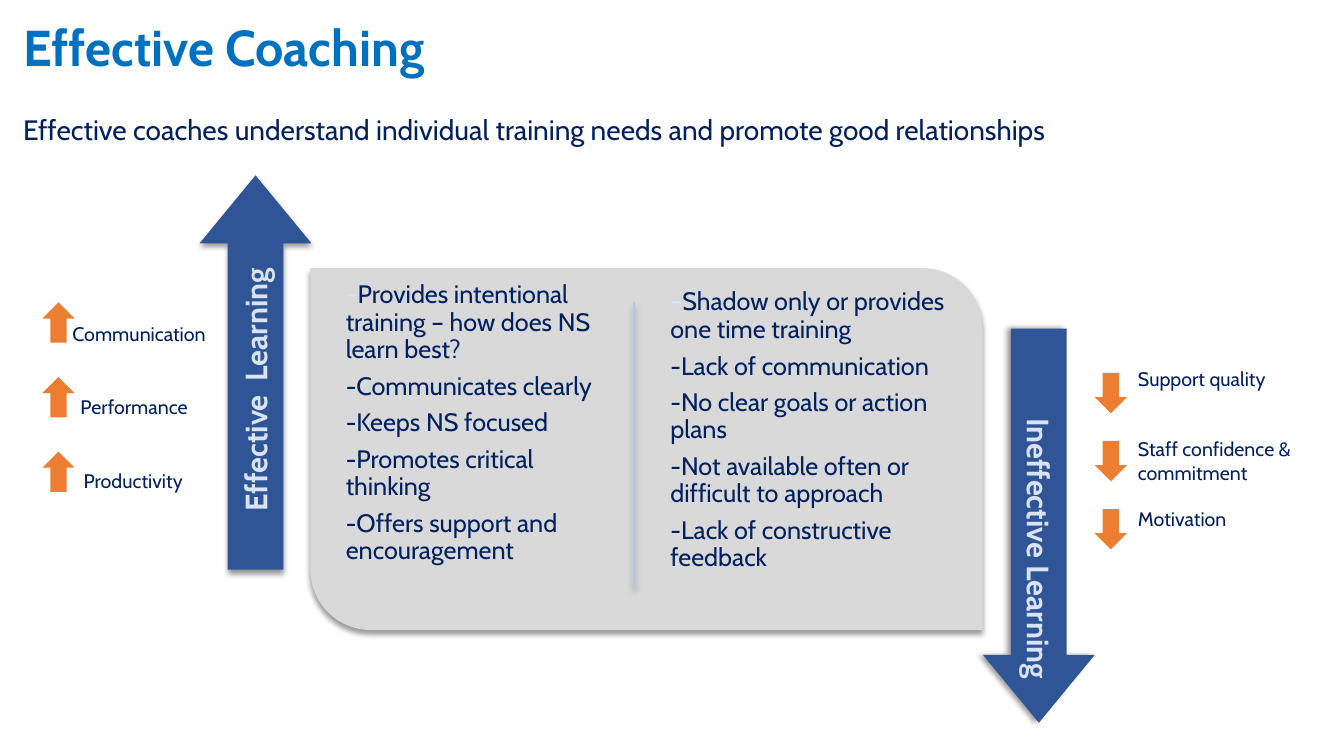
from lxml import etree
from pptx import Presentation
from pptx import util as u
from pptx.dml.color import RGBColor
from pptx.enum import shapes, text
from pptx.oxml import ns

WIDTH, HEIGHT = u.Inches(13.333), u.Inches(7.5)
FONT = "Cabin"

TITLE_BLUE = RGBColor(0x00, 0x70, 0xC0)
NAVY = RGBColor(0x00, 0x20, 0x60)
ARROW_BLUE = RGBColor(0x2F, 0x55, 0x97)
PALE_BLUE = RGBColor(0xDA, 0xE3, 0xF3)
DIVIDER_BLUE = RGBColor(0xB4, 0xC7, 0xE7)
PANEL_GREY = RGBColor(0xD9, 0xD9, 0xD9)
ORANGE = RGBColor(0xED, 0x7D, 0x31)

EFFECTIVE = [
    "Provides intentional training – how does NS learn best?",
    "Communicates clearly",
    "Keeps NS focused",
    "Promotes critical thinking",
    "Offers support and encouragement",
]
INEFFECTIVE = [
    "Shadow only or provides one time training",
    "Lack of communication",
    "No clear goals or action plans",
    "Not available often or difficult to approach",
    "Lack of constructive feedback",
]
# Label, left and width in percent of the slide's width
GAINS = [("Communication", 4.65, 11.78), ("Performance", 5.25, 9.83),
         ("Productivity", 5.48, 9.45)]
LOSSES = [("Support quality", 83.93, 12.98),
          ("Staff confidence & commitment", 83.93, 14.25),
          ("Motivation", 83.93, 10.88)]


def area(left, top, width, height):
    """Turn percentages of the slide's size into lengths."""
    return [int(share * side / 100) for share, side in
            zip((left, top, width, height), (WIDTH, HEIGHT) * 2)]


def apply(target, formats):
    for name, value in formats.items():
        setattr(target, name, value)


def place(placeholder, box):
    apply(placeholder, dict(zip(("left", "top", "width", "height"), box)))


def add_run(paragraph, wording, size, color, bold=False):
    run = paragraph.add_run()
    run.text = wording
    apply(run.font, {"name": FONT, "size": u.Pt(size), "bold": bold})
    run.font.color.rgb = color


def add_shadow(element, direction=90):
    props = element._element.spPr
    effects = props.find(ns.qn("a:effectLst"))
    if effects is None:
        effects = etree.SubElement(props, ns.qn("a:effectLst"))
    shadow = etree.SubElement(
        effects, ns.qn("a:outerShdw"), blurRad=str(u.Pt(4)),
        dist=str(u.Pt(3)), dir=str(direction * 60000), rotWithShape="0")
    black = etree.SubElement(shadow, ns.qn("a:srgbClr"), val="000000")
    etree.SubElement(black, ns.qn("a:alpha"), val="40000")


def add_block(slide, preset, box, color, rotation=0, adjustments=()):
    block = slide.shapes.add_shape(preset, *box)
    block.shadow.inherit = False
    block.fill.solid()
    block.fill.fore_color.rgb = color
    block.line.fill.background()
    block.rotation = rotation
    for i, value in enumerate(adjustments):
        block.adjustments[i] = value
    return block


def add_label(slide, wording, box, size, color=NAVY, bold=False, rotation=0,
              align=text.PP_ALIGN.LEFT, anchor=text.MSO_ANCHOR.TOP):
    label = slide.shapes.add_textbox(*box)
    label.rotation = rotation
    apply(label.text_frame, {"word_wrap": True, "vertical_anchor": anchor})
    paragraph = label.text_frame.paragraphs[0]
    paragraph.alignment = align
    add_run(paragraph, wording, size, color, bold)


def fill_title(title):
    place(title, area(0.98, 0, 86.25, 13.2))
    apply(title.text_frame, {"vertical_anchor": text.MSO_ANCHOR.MIDDLE,
                             "auto_size": text.MSO_AUTO_SIZE.NONE})
    paragraph = title.text_frame.paragraphs[0]
    apply(paragraph, {"alignment": text.PP_ALIGN.LEFT, "line_spacing": 0.9})
    add_run(paragraph, "Effective Coaching", 36, TITLE_BLUE, True)


def fill_list(body, box, items):
    place(body, box)
    frame = body.text_frame
    apply(frame, {"word_wrap": True, "auto_size": text.MSO_AUTO_SIZE.NONE,
                  "vertical_anchor": text.MSO_ANCHOR.TOP})
    apply(frame, {f"margin_{side}": u.Inches(0.08)
                  for side in ("left", "top", "right", "bottom")})
    for i, item in enumerate(items):
        paragraph = frame.add_paragraph() if i else frame.paragraphs[0]
        props = paragraph._p.get_or_add_pPr()
        props.set("marL", "0")
        props.set("indent", "0")
        etree.SubElement(props, ns.qn("a:buNone"))
        apply(paragraph, {"line_spacing": 0.9, "space_before": u.Pt(0),
                          "space_after": u.Pt(6.8)})
        if i:
            add_run(paragraph, "-" + item, 18, NAVY)
        else:
            add_run(paragraph, "-", 20, PALE_BLUE)
            add_run(paragraph, item, 18, NAVY)


def add_panel(slide):
    panel = add_block(slide, shapes.MSO_SHAPE.ROUND_2_DIAG_RECTANGLE,
                      area(23.1, 35.47, 50.02, 47.87), PANEL_GREY,
                      adjustments=(0, 0.167))
    x, top, _, length = area(47.18, 40, 0, 37.6)
    divider = slide.shapes.add_connector(
        shapes.MSO_CONNECTOR.STRAIGHT, x, top, x, top + length)
    divider.line.color.rgb = DIVIDER_BLUE
    divider.line.width = u.Pt(1)
    # Panel and divider lie behind the lists
    for depth, part in enumerate((panel, divider)):
        add_shadow(part)
        slide.shapes._spTree.insert(2 + depth, part._element)


def add_learning_arrow(slide, wording, arrow_at, label_at, rotation,
                       shadow_direction, align):
    arrow = add_block(slide, shapes.MSO_SHAPE.RIGHT_ARROW,
                      area(*arrow_at, 29.33, 14.8), ARROW_BLUE, rotation,
                      (0.498, 0.607))
    add_shadow(arrow, shadow_direction)
    add_label(slide, wording, area(*label_at, 26.85, 7.33), 22, PALE_BLUE,
              True, rotation, align, text.MSO_ANCHOR.MIDDLE)


def add_outcomes(slide, outcomes, arrow_left, arrow_top, arrow_step,
                 label_top, label_step, rotation=0):
    for i, (wording, left, width) in enumerate(outcomes):
        add_block(slide, shapes.MSO_SHAPE.UP_ARROW,
                  area(arrow_left, arrow_top + i * arrow_step, 2.4, 5.33),
                  ORANGE, rotation)
        add_label(slide, wording,
                  area(left, label_top + i * label_step, width, 4.53), 14)


def main():
    deck = Presentation()
    apply(deck, {"slide_width": WIDTH, "slide_height": HEIGHT})
    slide = deck.slides.add_slide(deck.slide_layouts[3])
    title, effective, ineffective = slide.placeholders

    # Heading
    fill_title(title)
    add_label(slide, "Effective coaches understand individual training needs "
              "and promote good relationships",
              area(0.98, 14.27, 84.83, 5.87), 20)

    # Comparison of coaching habits
    fill_list(effective, area(25.13, 35.87, 21.68, 40.53), EFFECTIVE)
    fill_list(ineffective, area(49.28, 36.8, 22.73, 40.53), INEFFECTIVE)
    add_panel(slide)

    # Learning arrows
    add_learning_arrow(slide, "Effective  Learning", (4.35, 41.87),
                       (5.55, 47.87), 270, 90, text.PP_ALIGN.CENTER)
    add_learning_arrow(slide, "Ineffective Learning", (62.63, 62.13),
                       (63.9, 63.6), 90, 180, text.PP_ALIGN.RIGHT)

    # Outcomes on either side
    add_outcomes(slide, GAINS, 3.15, 40, 9.87, 41.87, 9.73)
    add_outcomes(slide, LOSSES, 81.45, 49.33, 9, 47.87, 9.27, 180)

    deck.save("out.pptx")


if __name__ == "__main__":
    main()
